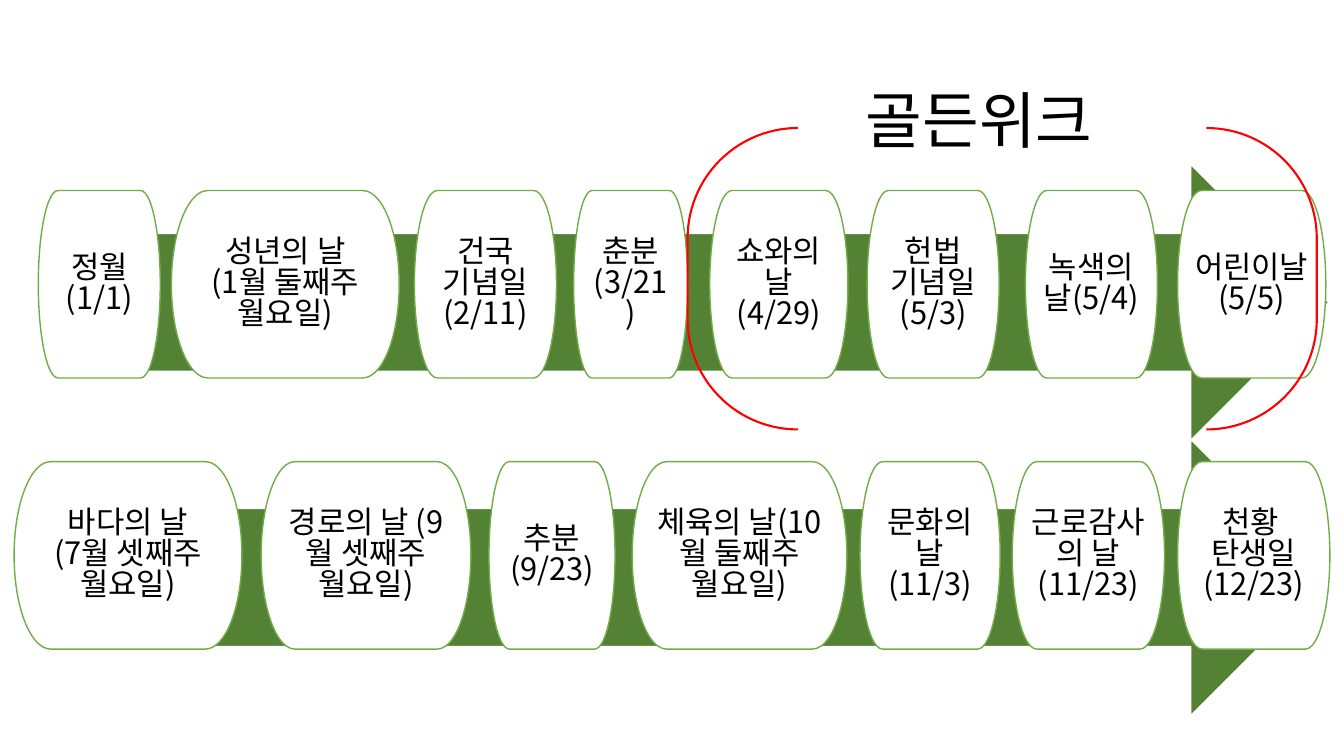
from dataclasses import dataclass

import pptx
import pptx.dml.color
import pptx.enum.shapes
import pptx.enum.text
import pptx.oxml.ns
import pptx.util
from lxml import etree

Inches = pptx.util.Inches
Pt = pptx.util.Pt
Kind = pptx.enum.shapes.MSO_SHAPE
Align = pptx.enum.text.PP_ALIGN
FONT = "Noto Sans CJK KR"


@dataclass
class Day:
    left: float
    width: float
    text: str


@dataclass
class Row:
    arrow: float  # top of the arrow
    top: float  # top of the boxes
    days: list[Day]


ROWS = [
    Row(1.63, 1.89, [
        Day(0.38, 1.21, "정월\n(1/1)"),
        Day(1.7, 2.26, "성년의 날\n(1월 둘째주\n월요일)"),
        Day(4.11, 1.41, "건국\n기념일(2/11)"),
        Day(5.69, 1.13, "춘분\n(3/21)"),
        Day(7.04, 1.37, "쇼와의 날(4/29)"),
        Day(8.6, 1.31, "헌법\n기념일(5/3)"),
        Day(10.17, 1.31, "녹색의 날(5/4)"),
        Day(11.68, 1.47, "어린이날\n(5/5)"),
    ]),
    Row(4.36, 4.58, [
        Day(0.14, 2.26, "바다의 날\n(7월 셋째주\n월요일)"),
        Day(2.59, 2.08, "경로의 날 (9월 셋째주 월요일)"),
        Day(4.85, 1.25, "추분(9/23)"),
        Day(6.27, 2.13, "체육의 날(10월 둘째주 월요일)"),
        Day(8.53, 1.39, "문화의 날(11/3)"),
        Day(10.04, 1.51, "근로감사의 날(11/23)"),
        Day(11.68, 1.51, "천황 \n탄생일(12/23)"),
    ]),
]


def tint(code: str) -> pptx.dml.color.RGBColor:
    return pptx.dml.color.RGBColor.from_string(code)


def write(shape, text: str, size: float, align, pitch: float) -> None:
    frame = shape.text_frame
    frame.text = text
    frame.word_wrap = True
    frame.vertical_anchor = pptx.enum.text.MSO_ANCHOR.MIDDLE
    for para in frame.paragraphs:
        para.alignment = align
        para.line_spacing = pitch
        for run in para.runs:
            run.font.size = Pt(size)
            run.font.name = FONT
            run.font.color.rgb = tint("000000")
            # Hangul takes the East Asian font
            east = etree.SubElement(run.font._element, pptx.oxml.ns.qn("a:ea"))
            east.set("typeface", FONT)


def draw(slide, kind, left: float, top: float, width: float, height: float,
         fill: str | None, line: str, weight: float = 1):
    shape = slide.shapes.add_shape(
        kind, Inches(left), Inches(top), Inches(width), Inches(height))
    shape.shadow.inherit = False
    if fill:
        shape.fill.solid()
        shape.fill.fore_color.rgb = tint(fill)
    else:
        shape.fill.background()
    shape.line.color.rgb = tint(line)
    shape.line.width = Pt(weight)
    return shape


def main() -> None:
    deck = pptx.Presentation()
    deck.slide_width = Inches(13.33)
    deck.slide_height = Inches(7.5)
    slide = deck.slides.add_slide(deck.slide_layouts[6])

    # Title
    title = slide.shapes.add_textbox(
        Inches(8.49), Inches(0.5), Inches(3.11), Inches(1.45))
    write(title, "골든위크", 44, Align.LEFT, 0.9)

    # Arrows with their holidays
    for row in ROWS:
        draw(slide, Kind.RIGHT_ARROW, 0.71, row.arrow, 12.47, 2.74,
             "548235", "FFFFFF")
        for day in row.days:
            box = draw(slide, Kind.FLOWCHART_TERMINATOR, day.left, row.top,
                       day.width, 1.86, "FFFFFF", "70AD47")
            write(box, day.text, 22, Align.CENTER, 0.84)

    # Bracket around the golden week
    pair = draw(slide, Kind.DOUBLE_BRACKET, 6.82, 1.27, 6.24, 2.99,
                None, "FF0000", 1.5)
    pair.adjustments[0] = 0.366

    deck.save("out.pptx")


if __name__ == "__main__":
    main()
